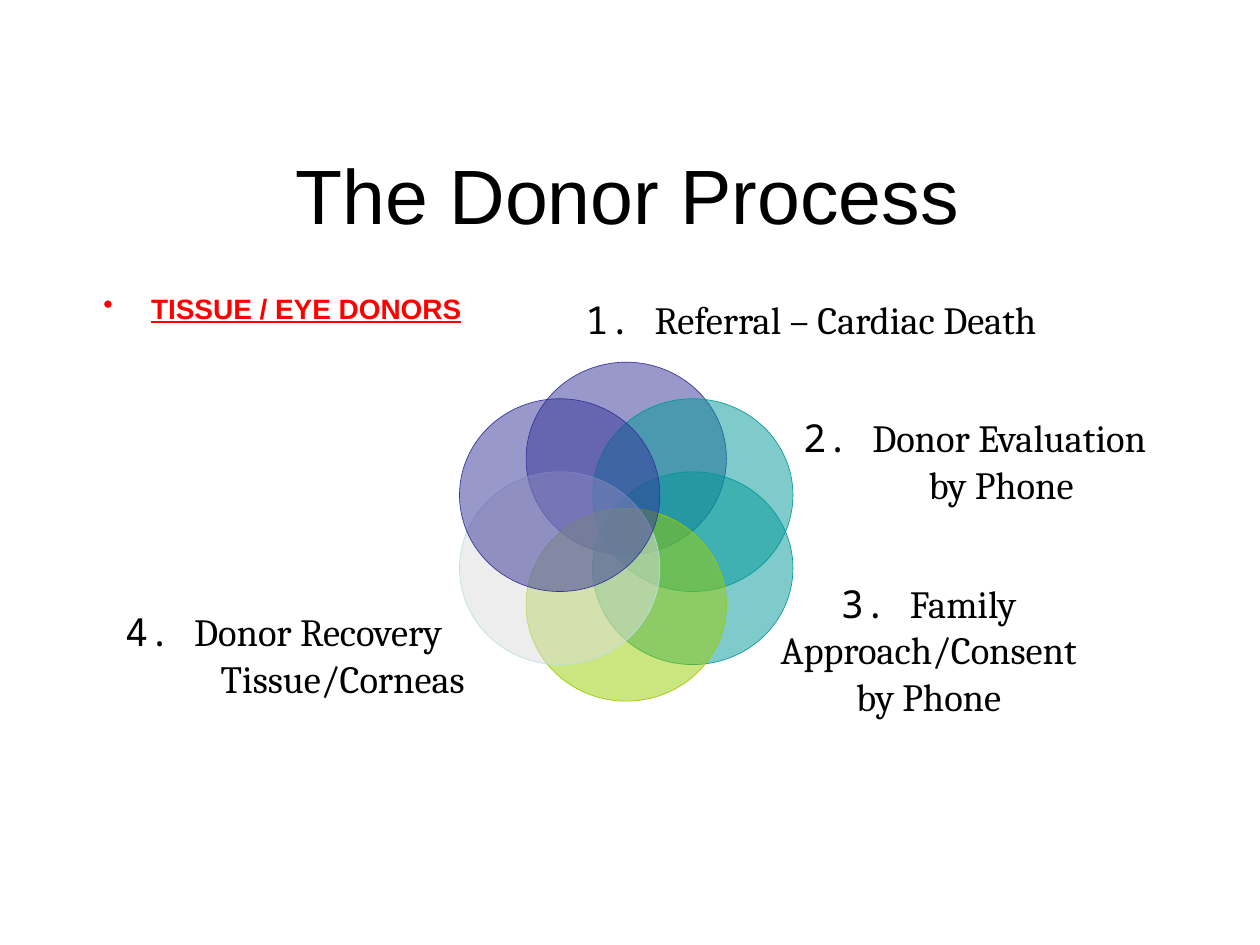
"""Build the donor process slide with its six-circle ring."""
from math import cos, radians, sin

from lxml.etree import SubElement
from pptx import Presentation
from pptx.dml.color import RGBColor
from pptx.enum.shapes import MSO_SHAPE
from pptx.enum.text import MSO_ANCHOR, PP_ALIGN
from pptx.oxml.ns import qn
from pptx.util import Inches, Pt

BLACK = RGBColor(0x00, 0x00, 0x00)
RED = RGBColor(0xFF, 0x00, 0x00)
INDIGO = RGBColor(0x33, 0x33, 0x99)
TEAL = RGBColor(0x00, 0x99, 0x99)
LIME = RGBColor(0x99, 0xCC, 0x00)
GREY = RGBColor(0xDD, 0xDD, 0xDD)
PALE = RGBColor(0xBB, 0xE0, 0xE3)

TITLE = "The Donor Process"
HEADING = "TISSUE / EYE DONORS"
CIRCLES = [(INDIGO, INDIGO), (TEAL, TEAL), (TEAL, TEAL),
           (LIME, LIME), (GREY, PALE), (INDIGO, INDIGO)]
STEPS = [
    ((4.2, 2.36, 4.47, 0.35), [("Referral – Cardiac Death", 0)]),
    ((5.83, 3.48, 3.42, 0.35), [("Donor Evaluation", 0.39), ("by Phone", 0.81)]),
    ((6.07, 4.98, 2.6, 0.35), [("Family Approach/Consent by Phone", 0)]),
    ((0.59, 5.02, 3.32, 0.35), [("Donor Recovery", 0), ("Tissue/Corneas", 0.94)]),
]
CENTRE_X, CENTRE_Y = 4.97, 4.22
RING_X, RING_Y = 0.61, 0.58
CIRCLE_W, CIRCLE_H = 1.59, 1.53
PLACEHOLDER_INSETS = (0.06, 0.06, 0.1, 0.06)


def add_box(s, at, insets=(0, 0, 0, 0), anchor=MSO_ANCHOR.MIDDLE):
    tf = s.shapes.add_textbox(*map(Inches, at)).text_frame
    tf.word_wrap = True
    tf.vertical_anchor = anchor
    tf.margin_left, tf.margin_top, tf.margin_right, tf.margin_bottom = map(Inches, insets)
    return tf


def style(r, name, size, color=BLACK):
    r.font.name, r.font.size = name, Pt(size)
    r.font.color.rgb = color


def indent(p, left, first=0):
    pPr = p._p.get_or_add_pPr()
    pPr.set("marL", str(Inches(left)))
    pPr.set("indent", str(Inches(first)))
    return pPr


def add_title(s):
    tf = add_box(s, (0.75, 0.83, 8.5, 1.42), PLACEHOLDER_INSETS)
    tf.text = TITLE
    p = tf.paragraphs[0]
    p.alignment = PP_ALIGN.CENTER
    indent(p, 0.04, -0.04)
    style(p.runs[0], "Arial", 44)


def add_heading(s):
    tf = add_box(s, (0.72, 2.25, 8.5, 5.25), PLACEHOLDER_INSETS, MSO_ANCHOR.TOP)
    tf.text = HEADING
    p = tf.paragraphs[0]
    SubElement(indent(p, 0.42, -0.38), qn("a:buChar")).set("char", "•")
    r = p.runs[0]
    style(r, "Arial", 16, RED)
    r.font.bold = r.font.underline = True


def add_circle(s, i, fill, line):
    angle = radians(360 / len(CIRCLES) * i)
    x = CENTRE_X + RING_X * sin(angle) - CIRCLE_W / 2
    y = CENTRE_Y - RING_Y * cos(angle) - CIRCLE_H / 2
    sp = s.shapes.add_shape(MSO_SHAPE.OVAL, *map(Inches, (x, y, CIRCLE_W, CIRCLE_H)))
    sp.shadow.inherit = False
    sp.fill.solid()
    sp.fill.fore_color.rgb = fill
    color = sp._element.spPr.find(qn("a:solidFill"))[0]
    SubElement(color, qn("a:alpha")).set("val", "50000")
    sp.line.color.rgb = line
    sp.line.width = Pt(0.37)


def add_step(s, number, at, lines):
    tf = add_box(s, at)
    for i, (text, left) in enumerate(lines):
        p = tf.add_paragraph() if i else tf.paragraphs[0]
        p.alignment = PP_ALIGN.CENTER
        indent(p, left)
        if i == 0:
            r = p.add_run()
            r.text = f"{number}. "
            style(r, "Noto Sans Mono", 22)
        r = p.add_run()
        r.text = text
        style(r, "Cambria", 22)


def main():
    prs = Presentation()
    prs.slide_width, prs.slide_height = Inches(10), Inches(7.5)
    s = prs.slides.add_slide(prs.slide_layouts[6])
    add_title(s)
    add_heading(s)
    for i, (fill, line) in enumerate(CIRCLES):
        add_circle(s, i, fill, line)
    for number, (at, lines) in enumerate(STEPS, 1):
        add_step(s, number, at, lines)
    prs.save("out.pptx")


if __name__ == "__main__":
    main()
